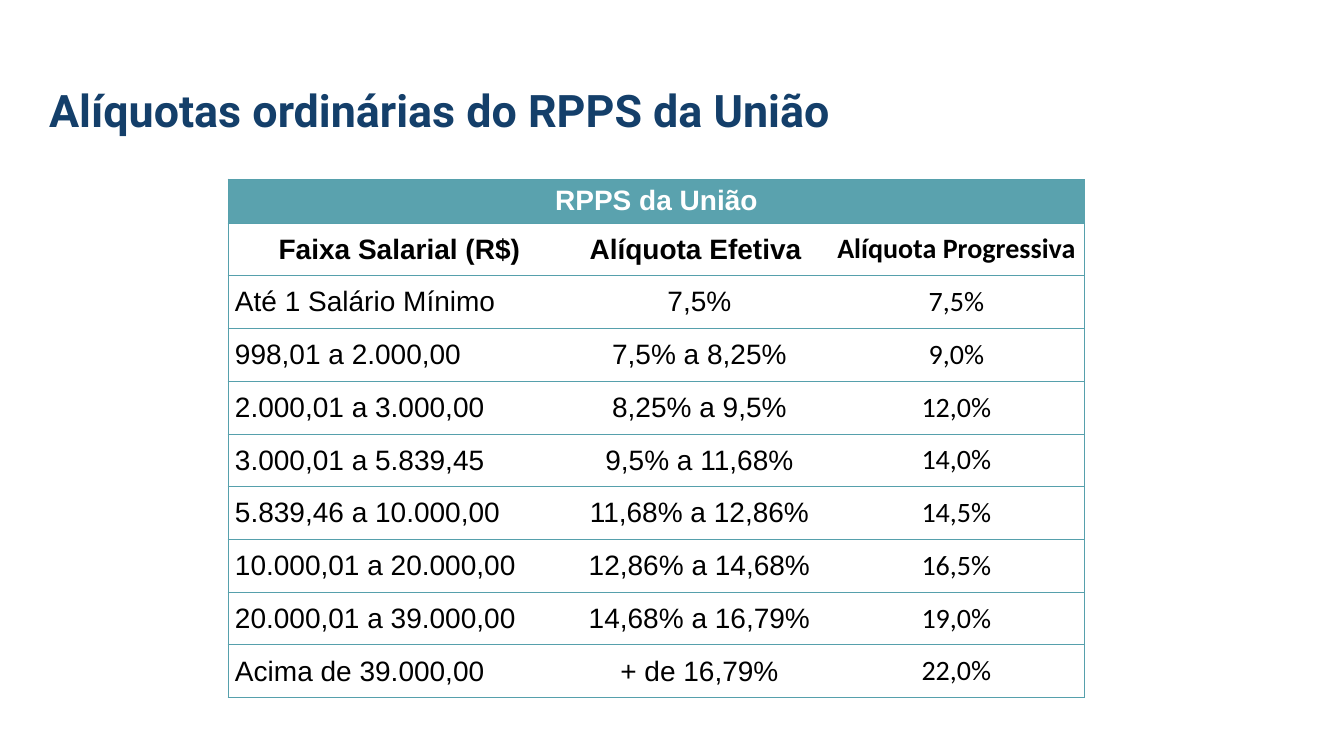
from dataclasses import dataclass

from lxml.etree import SubElement
from pptx import Presentation
from pptx.dml.color import RGBColor
from pptx.enum.text import MSO_ANCHOR, MSO_AUTO_SIZE, PP_ALIGN
from pptx.oxml.ns import qn
from pptx.util import Emu, Pt

# Content
TITLE = "Alíquotas ordinárias do RPPS da União"
TABLE_HEADING = "RPPS da União"
COLUMN_HEADINGS = ("Faixa Salarial (R$)", "Alíquota Efetiva ", "Alíquota Progressiva")
RATES = [
    ("Até 1 Salário Mínimo", "7,5%", "7,5%"),
    ("998,01 a 2.000,00", "7,5% a 8,25%", "9,0%"),
    ("2.000,01 a 3.000,00", "8,25% a 9,5%", "12,0%"),
    ("3.000,01 a 5.839,45", "9,5% a 11,68%", "14,0%"),
    ("5.839,46 a 10.000,00", "11,68% a 12,86%", "14,5%"),
    ("10.000,01 a 20.000,00", "12,86% a 14,68%", "16,5%"),
    ("20.000,01 a 39.000,00", "14,68% a 16,79%", "19,0%"),
    ("Acima de 39.000,00", "+ de 16,79%", "22,0%"),
]


# Theme
@dataclass(frozen=True)
class Theme:
    navy: RGBColor = RGBColor(0x14, 0x3F, 0x6A)
    teal: RGBColor = RGBColor(0x5A, 0xA2, 0xAE)
    border: RGBColor = RGBColor(0x56, 0xA0, 0xAC)
    white: RGBColor = RGBColor(0xFF, 0xFF, 0xFF)
    black: RGBColor = RGBColor(0, 0, 0)
    title_font: str = "Roboto"
    column_fonts: tuple = ("Arial", "Arial", "Calibri")
    title_size: int = 32
    table_size: int = 20
    border_width: float = 0.75


THEME = Theme()

# Layout in px, 100.8 px to the inch
SLIDE = (1344, 756)
TITLE_BOX = (0, 77, 1013, 65)
TITLE_INDENT = 39
TABLE_BOX = (228, 179, 857, 519)
COLUMN_WIDTHS = (343, 257, 257)
HEADING_HEIGHT = 44
CELL_MARGINS = (7, 5)


def px(length):
    return Emu(round(length * 914400 / 100.8))


def set_font(font, name, size, color, bold):
    font.name, font.size, font.bold = name, Pt(size), bold
    font.color.rgb = color


def set_borders(cell, drawn_sides):
    properties = cell._tc.get_or_add_tcPr()
    for side in "LRTB":
        line = SubElement(properties, qn(f"a:ln{side}"), w=str(Pt(THEME.border_width)))
        if side in drawn_sides:
            fill = SubElement(line, qn("a:solidFill"))
            SubElement(fill, qn("a:srgbClr"), val=str(THEME.border))
        else:
            SubElement(line, qn("a:noFill"))


def add_title(page):
    title = page.shapes.title
    title.left, title.top, title.width, title.height = map(px, TITLE_BOX)
    frame = title.text_frame
    frame.text = TITLE
    frame.word_wrap = True
    frame.auto_size = MSO_AUTO_SIZE.SHAPE_TO_FIT_TEXT
    para = frame.paragraphs[0]
    para.alignment = PP_ALIGN.LEFT
    properties = para._p.get_or_add_pPr()
    properties.set("marL", str(px(TITLE_INDENT)))
    properties.set("indent", "0")
    set_font(para.font, THEME.title_font, THEME.title_size, THEME.navy, True)


def add_rate_table(page):
    rows = [(TABLE_HEADING, "", ""), COLUMN_HEADINGS, *RATES]
    last_column = len(COLUMN_WIDTHS) - 1
    table = page.shapes.add_table(len(rows), len(COLUMN_WIDTHS), *map(px, TABLE_BOX)).table
    table.first_row = table.horz_banding = False
    for column, width in zip(table.columns, COLUMN_WIDTHS):
        column.width = px(width)
    body_height = (TABLE_BOX[3] - HEADING_HEIGHT) / (len(rows) - 1)

    for r, texts in enumerate(rows):
        table.rows[r].height = px(body_height if r else HEADING_HEIGHT)
        for c, text in enumerate(texts):
            cell = table.cell(r, c)
            sides = "TB" + ("L" if c == 0 else "") + ("R" if c == last_column else "")
            set_borders(cell, sides)
            cell.fill.solid()
            cell.fill.fore_color.rgb = THEME.white if r else THEME.teal
            cell.margin_left = cell.margin_right = px(CELL_MARGINS[0])
            cell.margin_top = cell.margin_bottom = px(CELL_MARGINS[1])
            cell.vertical_anchor = MSO_ANCHOR.MIDDLE
            cell.text = text
            para = cell.text_frame.paragraphs[0]
            para.alignment = PP_ALIGN.LEFT if r > 1 and c == 0 else PP_ALIGN.CENTER
            color = THEME.black if r else THEME.white
            set_font(para.font, THEME.column_fonts[c], THEME.table_size, color, r < 2)
    table.cell(0, 0).merge(table.cell(0, last_column))


def main():
    deck = Presentation()
    deck.slide_width, deck.slide_height = map(px, SLIDE)
    page = deck.slides.add_slide(deck.slide_layouts[5])
    add_title(page)
    add_rate_table(page)
    deck.save("out.pptx")


if __name__ == "__main__":
    main()
